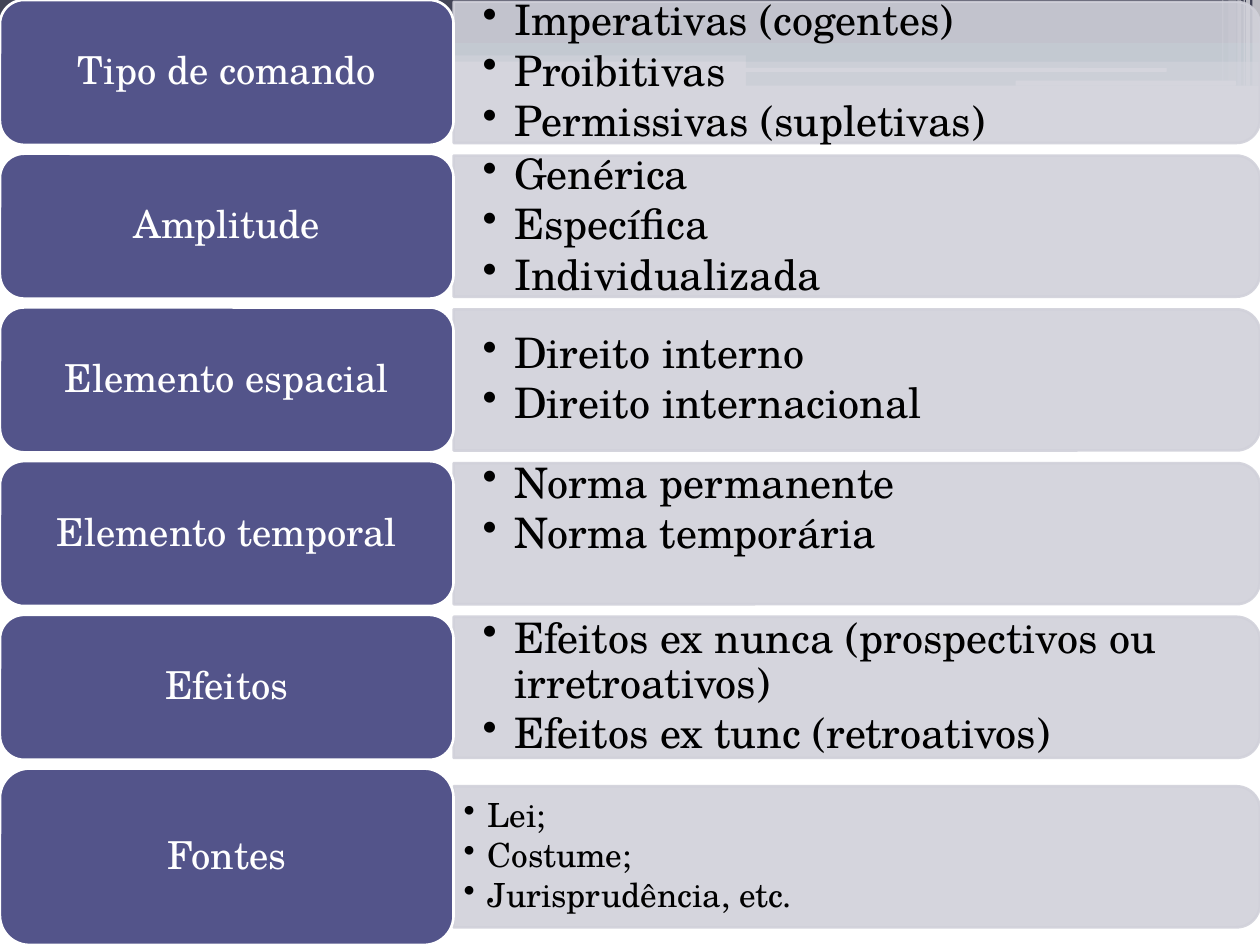
from lxml.etree import SubElement
from pptx import Presentation
from pptx.dml.color import RGBColor
from pptx.enum.shapes import MSO_SHAPE
from pptx.enum.text import MSO_ANCHOR, PP_ALIGN
from pptx.oxml.ns import qn
from pptx.util import Inches, Pt

FONT = "TeX Gyre Schola"
WHITE = RGBColor(0xFF, 0xFF, 0xFF)
BLACK = RGBColor(0x00, 0x00, 0x00)
SLATE = RGBColor(0x42, 0x44, 0x56)
TEAL = RGBColor(0x43, 0x80, 0x86)
INDIGO = RGBColor(0x53, 0x54, 0x8A)
MIST = RGBColor(0xD1, 0xD1, 0xDA)

# Grid: label column, panel column, equal rows
WIDE, HIGH = 10, 7.5
LABEL_W = 0.36 * WIDE
PANEL_W, PANEL_H = WIDE - LABEL_W, 1.12
TEXT_W, TEXT_H = 6.35, 1.01
ROW_H, GAP = 1.15, 0.07

# Label, items, upward shift of the items
ROWS = [
    ("Tipo de comando",
     ["Imperativas (cogentes)", "Proibitivas", "Permissivas (supletivas)"], 0),
    ("Amplitude", ["Genérica", "Específica", "Individualizada"], 0),
    ("Elemento espacial", ["Direito interno", "Direito internacional"], 0),
    ("Elemento temporal", ["Norma permanente", "Norma temporária"], 0.19),
    ("Efeitos", ["Efeitos ex nunca (prospectivos ou irretroativos)",
                 "Efeitos ex tunc (retroativos)"], 0),
    ("Fontes", ["Lei;", "Costume;", "Jurisprudência, etc."], 0),
]

# Header bands: left, top, width, height, colour, opacity
BANDS = [
    (0, 0.4, WIDE, 0.09, TEAL, 50),
    (0, 0, WIDE, 0.34, SLATE, 100),
    (0, 0.34, WIDE, 0.1, TEAL, 100),
    (5.92, 0.39, 4.08, 0.1, TEAL, 100),
    (5.92, 0.48, 4.08, 0.2, TEAL, 50),
]
PILLS = [(5.91, 0.54, 3.35, 0.03), (8.06, 0.64, 1.75, 0.04)]
# Thin white stripes: left, width, height, opacity
STRIPES = [
    (9.94, 0.06, 0.68, 65), (9.89, 0.03, 0.68, 65), (9.87, 0.01, 0.68, 60),
    (9.82, 0.03, 0.68, 40), (9.75, 0.06, 0.64, 20), (9.7, 0.01, 0.64, 30),
]


def paint(fill, color, alpha):
    fill.solid()
    fill.fore_color.rgb = color
    if alpha < 100:
        node = fill._xPr.find(qn("a:solidFill"))[0]
        SubElement(node, qn("a:alpha"), val=str(alpha * 1000))


def add_box(slide, kind, box, color, alpha=100, line=None):
    shape = slide.shapes.add_shape(kind, *map(Inches, box))
    shape.shadow.inherit = False
    paint(shape.fill, color, alpha)
    if line is None:
        shape.line.fill.background()
    else:
        paint(shape.line.fill, line, alpha)
        shape.line.width = Pt(1.5)
    return shape


def write(shape, lines, size, color, align=PP_ALIGN.LEFT, pad=(0.09, 0.05),
          indent=0):
    frame = shape.text_frame
    frame.word_wrap = True
    frame.vertical_anchor = MSO_ANCHOR.MIDDLE
    frame.margin_left = frame.margin_right = Inches(pad[0])
    frame.margin_top = frame.margin_bottom = Inches(pad[1])
    for i, line in enumerate(lines):
        para = frame.add_paragraph() if i else frame.paragraphs[0]
        para.alignment = align
        para.line_spacing = 0.9
        run = para.add_run()
        run.text = line
        run.font.name, run.font.size = FONT, Pt(size)
        run.font.color.rgb = color
        if indent:
            para.space_after = Pt(round(0.12 * size, 1))
            props = para._p.get_or_add_pPr()
            props.set("marL", str(Inches(indent)))
            props.set("indent", str(-Inches(indent)))
            SubElement(props, qn("a:buChar"), char="•")


def add_header(slide):
    for *box, color, alpha in BANDS:
        add_box(slide, MSO_SHAPE.RECTANGLE, box, color, alpha)
    for box in PILLS:
        add_box(slide, MSO_SHAPE.ROUNDED_RECTANGLE, box, WHITE)
    for left, width, height, alpha in STRIPES:
        add_box(slide, MSO_SHAPE.RECTANGLE, (left, 0, width, height), WHITE, alpha)


def add_row(slide, top, height, label, items, lift, size, pad, indent):
    mid = top + height / 2
    # Panel: a turned shape, rounded on its right side
    panel = add_box(slide, MSO_SHAPE.ROUND_2_SAME_RECTANGLE,
                    (LABEL_W + (PANEL_W - PANEL_H) / 2, mid - PANEL_W / 2,
                     PANEL_H, PANEL_W), MIST, 90, MIST)
    panel.rotation = 90
    # Items
    text = slide.shapes.add_textbox(Inches(LABEL_W), Inches(mid - TEXT_H / 2 - lift),
                                    Inches(TEXT_W), Inches(TEXT_H))
    write(text, items, size, BLACK, pad=pad, indent=indent)
    # Label
    tile = add_box(slide, MSO_SHAPE.ROUNDED_RECTANGLE,
                   (0, top, LABEL_W, height), INDIGO, line=WHITE)
    write(tile, [label], 22, WHITE, PP_ALIGN.CENTER)


def main():
    deck = Presentation()
    deck.slide_width, deck.slide_height = Inches(WIDE), Inches(HIGH)
    slide = deck.slides.add_slide(deck.slide_layouts[6])
    add_header(slide)
    for i, row in enumerate(ROWS):
        top = i * (ROW_H + GAP)
        if i < len(ROWS) - 1:
            add_row(slide, top, ROW_H, *row, 24, (0.23, 0.11), 0.25)
        else:  # the last row fills the rest, with smaller items
            add_row(slide, top, HIGH - top, *row, 19, (0.08, 0.04), 0.19)
    deck.save("out.pptx")


if __name__ == "__main__":
    main()
